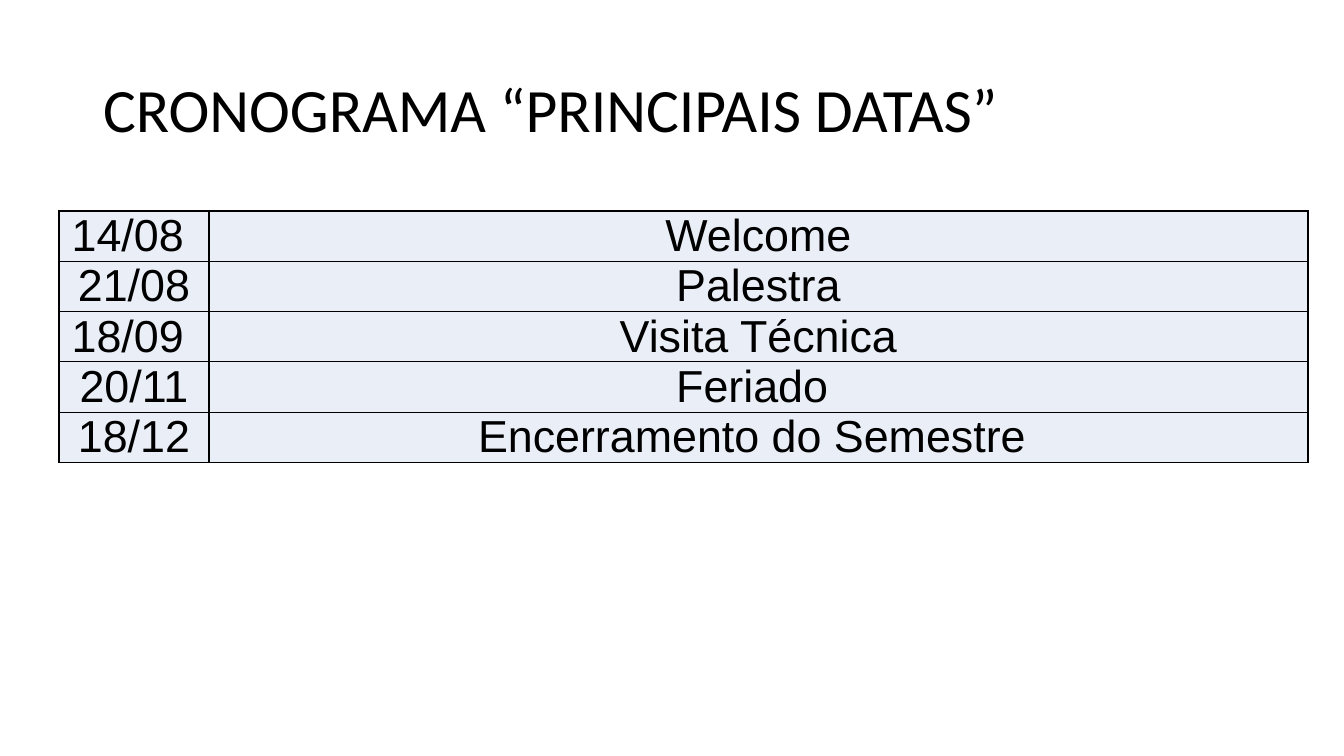
import pptx
import pptx.dml.color
import pptx.enum.text
import pptx.oxml
import pptx.oxml.ns
import pptx.util

EMU_PER_PX = 914400 / 100.8
BLACK = pptx.dml.color.RGBColor(0x00, 0x00, 0x00)
WHITE = pptx.dml.color.RGBColor(0xFF, 0xFF, 0xFF)
PALE_BLUE = pptx.dml.color.RGBColor(0xEA, 0xEF, 0xF7)

TITLE_ONLY = 5
TITLE_FONT = {"name": "Calibri", "size": pptx.util.Pt(44)}
CELL_FONT = {"name": "Arial", "size": pptx.util.Pt(32)}
COLUMN_WIDTHS = (150, 1099)
ROW_HEIGHT = 50
DATES = (
    ("14/08 ", "Welcome"),
    ("21/08", "Palestra"),
    ("18/09 ", "Visita Técnica"),
    ("20/11", "Feriado "),
    ("18/12", "Encerramento do Semestre "),
)


def px(length):
    return pptx.util.Emu(round(length * EMU_PER_PX))


def set_attributes(target, values):
    for name, value in values.items():
        setattr(target, name, value)


def write_text(frame, text, font, align):
    paragraph = frame.paragraphs[0]
    paragraph.alignment = align
    run = paragraph.add_run()
    run.text = text
    set_attributes(run.font, font)
    run.font.color.rgb = BLACK
    return paragraph


def add_title(slide, text):
    title = slide.shapes.title
    set_attributes(title, {"left": px(93), "top": px(40),
                           "width": px(1159), "height": px(146)})
    title.text_frame.vertical_anchor = pptx.enum.text.MSO_ANCHOR.MIDDLE
    paragraph = write_text(title.text_frame, text, TITLE_FONT,
                           pptx.enum.text.PP_ALIGN.LEFT)
    paragraph.line_spacing = 0.9


def add_borders(cell):
    """Draw a thin black line on all four sides of the cell."""
    properties = cell._tc.get_or_add_tcPr()
    for position, side in enumerate(("lnL", "lnR", "lnT", "lnB")):
        properties.insert(position, pptx.oxml.parse_xml(
            f'<a:{side} {pptx.oxml.ns.nsdecls("a")} w="12700">'
            f'<a:solidFill><a:srgbClr val="{BLACK}"/></a:solidFill></a:{side}>'))


def format_cell(cell, text):
    set_attributes(cell, {
        "margin_left": px(5), "margin_right": px(5),
        "margin_top": 0, "margin_bottom": 0,
        "vertical_anchor": pptx.enum.text.MSO_ANCHOR.MIDDLE,
    })
    cell.fill.solid()
    cell.fill.fore_color.rgb = PALE_BLUE
    add_borders(cell)
    write_text(cell.text_frame, text, CELL_FONT, pptx.enum.text.PP_ALIGN.CENTER)


def add_schedule(slide, dates):
    schedule = slide.shapes.add_table(
        len(dates), len(COLUMN_WIDTHS), px(59), px(211),
        px(sum(COLUMN_WIDTHS)), px(ROW_HEIGHT * len(dates))).table
    set_attributes(schedule, {"first_row": False, "horz_banding": False})
    for column, width in zip(schedule.columns, COLUMN_WIDTHS):
        column.width = px(width)
    for row, entry in zip(schedule.rows, dates):
        row.height = px(ROW_HEIGHT)
        for cell, text in zip(row.cells, entry):
            format_cell(cell, text)


def main():
    presentation = pptx.Presentation()
    set_attributes(presentation, {"slide_width": px(1344), "slide_height": px(756)})
    slide = presentation.slides.add_slide(presentation.slide_layouts[TITLE_ONLY])
    slide.background.fill.solid()
    slide.background.fill.fore_color.rgb = WHITE
    add_title(slide, "CRONOGRAMA “PRINCIPAIS DATAS”")
    add_schedule(slide, DATES)
    presentation.save("out.pptx")


if __name__ == "__main__":
    main()
